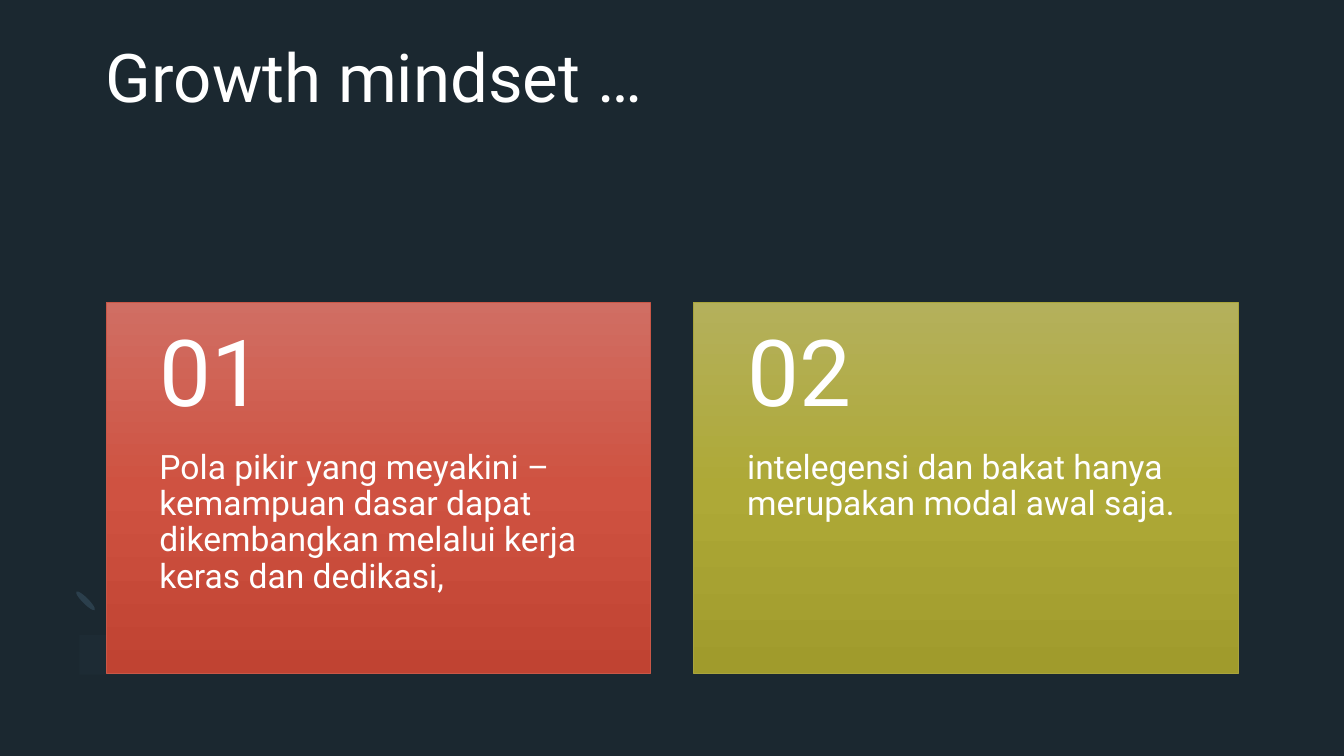
import copy
from dataclasses import dataclass

import pptx
import pptx.dml.color
import pptx.enum.shapes
import pptx.enum.text
import pptx.oxml
import pptx.oxml.ns
import pptx.util

Cm = pptx.util.Cm
Pt = pptx.util.Pt
rgb = pptx.dml.color.RGBColor.from_string
ANCHOR = pptx.enum.text.MSO_ANCHOR
SHAPES = pptx.enum.shapes.MSO_SHAPE


@dataclass(frozen=True)
class Theme:
    font: str = "Roboto"
    background: str = "1B2830"
    text: str = "FFFFFF"
    leaf: str = "2B3F4C"
    ring: str = "7499B1"
    red: tuple = ("D06E63", "CF5241", "C04332")
    red_edge: str = "C95747"
    olive: tuple = ("B4B05B", "AEA937", "A09B2C")
    olive_edge: str = "A9A43C"
    title_size: int = 48
    number_size: int = 66
    body_size: int = 24


theme = Theme()


def write(holder, words, size, spacing, **frame_format):
    frame = holder.text_frame
    frame_format = {
        "word_wrap": True,
        "auto_size": pptx.enum.text.MSO_AUTO_SIZE.NONE,
        "vertical_anchor": ANCHOR.TOP,
        **frame_format,
    }
    for name, value in frame_format.items():
        setattr(frame, name, value)
    paragraph = frame.paragraphs[0]
    paragraph.alignment = pptx.enum.text.PP_ALIGN.LEFT
    paragraph.line_spacing = spacing
    run = paragraph.add_run()
    run.text = words
    for name, value in {"name": theme.font, "size": Pt(size), "bold": False}.items():
        setattr(run.font, name, value)
    run.font.color.rgb = rgb(theme.text)


deck = pptx.Presentation()
deck.slide_width, deck.slide_height = Cm(33.87), Cm(19.05)
slide = deck.slides.add_slide(deck.slide_layouts[5])
slide.background.fill.solid()
slide.background.fill.fore_color.rgb = rgb(theme.background)

leaf = slide.shapes.add_shape(SHAPES.OVAL, Cm(2.08), Cm(14.81), Cm(0.15), Cm(0.66))
leaf.rotation = 135

ring_start = (1.93, 16.74)
ring_segments = [
    [(1.42, 16.23), (1.47, 15.37), (2.06, 14.78)],
    [(2.51, 15.24)],
    [(2.21, 15.52), (2.18, 15.98), (2.44, 16.21)],
    [(2.69, 16.46), (3.12, 16.43), (3.43, 16.15)],
    [(3.86, 16.61)],
    [(3.3, 17.17), (2.41, 17.25), ring_start],
]
ring_points = [ring_start]
for segment in ring_segments:
    if len(segment) == 1:
        ring_points += segment
        continue
    curve = [ring_points[-1], *segment]
    for step in range(1, 13):
        t = step / 12
        weights = ((1 - t) ** 3, 3 * t * (1 - t) ** 2, 3 * t**2 * (1 - t), t**3)
        ring_points.append(
            tuple(sum(w * point[axis] for w, point in zip(weights, curve)) for axis in (0, 1))
        )
outline = slide.shapes.build_freeform(*ring_start, scale=Cm(1))
outline.add_line_segments(ring_points[1:], close=True)
ring = outline.convert_to_shape()

for ornament, colour in ((leaf, theme.leaf), (ring, theme.ring)):
    ornament.shadow.inherit = False
    ornament.fill.solid()
    ornament.fill.fore_color.rgb = rgb(colour)
    ornament.line.fill.background()
ring_colour = ring.fill._xPr.find(".//" + pptx.oxml.ns.qn("a:srgbClr"))
ring_colour.append(
    pptx.oxml.parse_xml(f'<a:alpha {pptx.oxml.ns.nsdecls("a")} val="3000"/>')
)

title = slide.shapes.title
title_place = {"left": Cm(2.67), "top": Cm(0.89), "width": Cm(28.52), "height": Cm(4.72)}
for name, value in title_place.items():
    setattr(title, name, value)
write(title, "Growth mindset …", theme.title_size, 1.0,
      margin_left=0, margin_right=0, margin_top=0, margin_bottom=0)

card_left, card_top, card_pitch = 2.67, 7.62, 14.81
card_width, card_height, number_height = 13.72, 9.35, 3.73
side_margins = {"margin_left": Cm(1.35), "margin_right": Cm(1.35)}
cards = [
    ("Pola pikir yang meyakini – kemampuan dasar dapat dikembangkan melalui kerja "
     "keras dan dedikasi,", theme.red, theme.red_edge),
    ("intelegensi dan bakat hanya merupakan modal awal saja.",
     theme.olive, theme.olive_edge),
]
for index, (statement, shades, edge) in enumerate(cards):
    left = Cm(card_left + index * card_pitch)
    card = slide.shapes.add_shape(
        SHAPES.RECTANGLE, left, Cm(card_top), Cm(card_width), Cm(card_height)
    )
    card.shadow.inherit = False
    card.fill.gradient()
    card.fill.gradient_angle = 270
    stop_list = card.fill._xPr.find(".//" + pptx.oxml.ns.qn("a:gsLst"))
    stop_list.append(copy.deepcopy(stop_list[0]))
    for stop, shade, position in zip(card.fill.gradient_stops, shades, (0, 0.5, 1)):
        stop.color.rgb = rgb(shade)
        stop.position = position
    card.line.color.rgb = rgb(edge)
    card.line.width = Pt(0.5)

    body = slide.shapes.add_textbox(
        left, Cm(card_top + number_height), Cm(card_width), Cm(card_height - number_height)
    )
    write(body, statement, theme.body_size, 0.9,
          margin_top=0, margin_bottom=Cm(0.91), **side_margins)
    number = slide.shapes.add_textbox(left, Cm(card_top), Cm(card_width), Cm(number_height))
    write(number, f"{index + 1:02}", theme.number_size, 0.9, vertical_anchor=ANCHOR.MIDDLE,
          margin_top=Cm(0.46), margin_bottom=Cm(0.46), **side_margins)

deck.save("out.pptx")
